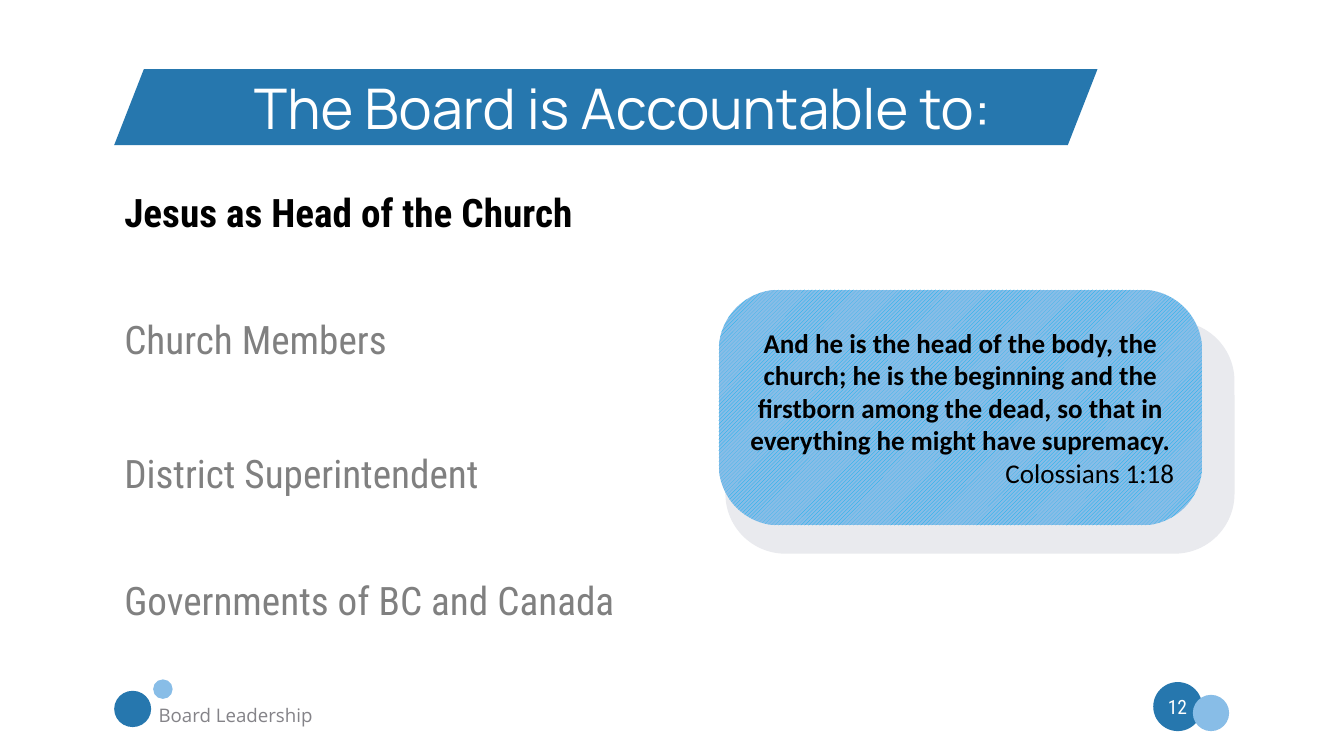
from dataclasses import dataclass
from pptx import Presentation
from pptx.dml.color import RGBColor
from pptx.enum.dml import MSO_PATTERN
from pptx.enum.shapes import MSO_SHAPE
from pptx.enum.text import MSO_ANCHOR, MSO_AUTO_SIZE, PP_ALIGN
from pptx.oxml.xmlchemy import OxmlElement
from pptx.util import Inches, Pt

# Content
TITLE = "The Board is Accountable to:"
ACCOUNTABLE_TO = ["Jesus as Head of the Church", "Church Members",
                  "District Superintendent", "Governments of BC and Canada"]
VERSE = ("And he is the head of the body, the church; he is the beginning and the "
         "firstborn among the dead, so that in everything he might have supremacy.")
REFERENCE = "Colossians 1:18"
FOOTER = "Board Leadership"
PAGE_NUMBER = "12"


@dataclass(frozen=True)
class Theme:
    blue: str = "2677AE"
    light_blue: str = "88BDE7"
    stripe: str = "00B0F0"
    shade: str = "E9EAEE"
    white: str = "FFFFFF"
    black: str = "000000"
    muted: str = "808080"
    footer: str = "848388"
    title_size: int = 60
    list_size: int = 42
    verse_size: int = 29
    number_size: int = 21
    footer_size: int = 20
    title_font: str = "Manrope"
    list_font: str = "Roboto Condensed"
    verse_font: str = "Calibri"
    footer_font: str = "Open Sans"


THEME = Theme()

# Layout in inches: left, top, width, height
WIDTH, HEIGHT = 20.01, 11.25
LEFT = 1.7
BANNER = (LEFT, 1.03, 14.64, 1.13)
TITLE_BOX = (LEFT, 1.03, 13.2, 1.13)
LIST_WIDTH = 8.75
ROW_TOPS = [2.72, 4.6, 6.58, 8.45]
ROW_HEIGHT = 0.86
LINE_HEIGHT = 1.172  # share of the type size
CARD_SHADE = (10.8, 4.78, 7.58, 3.46)
CARD = (10.7, 4.31, 7.2, 3.51)
DOTS = [
    ((17.17, 10.15, 0.73, 0.73), THEME.blue),
    ((LEFT, 10.28, 0.55, 0.54), THEME.blue),
    ((2.28, 10.11, 0.29, 0.29), THEME.light_blue),
    ((17.76, 10.34, 0.54, 0.54), THEME.light_blue),
]
NUMBER_BOX = (17.17, 10.29, 0.72, 0.6)
FOOTER_BOX = (LEFT + 0.51, 10.4, 2.65, 0.49)


def color(value):
    return RGBColor.from_string(value)


def place(shape, box):
    shape.left, shape.top, shape.width, shape.height = map(Inches, box)


def add_block(page, preset, box, fill, corner=None):
    shape = page.shapes.add_shape(preset, *map(Inches, box))
    shape.shadow.inherit = False
    shape.fill.solid()
    shape.fill.fore_color.rgb = color(fill)
    shape.line.fill.background()
    if corner is not None:
        shape.adjustments[0] = corner
    return shape


def set_frame(frame, anchor=MSO_ANCHOR.TOP, side=0.15, edge=0.08):
    frame.word_wrap = True
    frame.auto_size = MSO_AUTO_SIZE.NONE
    frame.vertical_anchor = anchor
    frame.margin_left = frame.margin_right = Inches(side)
    frame.margin_top = frame.margin_bottom = Inches(edge)


def write(para, text, font, size, ink, align=PP_ALIGN.LEFT, bold=False):
    para.text = text
    para.alignment = align
    para.font.name, para.font.size, para.font.bold = font, Pt(size), bold
    para.font.color.rgb = color(ink)


def add_lines(frame, lines):
    for index, line in enumerate(lines):
        para = frame.add_paragraph() if index else frame.paragraphs[0]
        write(para, *line)


def add_label(page, box, *line, side=0.15, edge=0.08):
    frame = page.shapes.add_textbox(*map(Inches, box)).text_frame
    set_frame(frame, side=side, edge=edge)
    write(frame.paragraphs[0], *line)


def fill_list(body):
    place(body, (LEFT, ROW_TOPS[0], LIST_WIDTH, ROW_TOPS[-1] + ROW_HEIGHT - ROW_TOPS[0]))
    frame = body.text_frame
    set_frame(frame)
    add_lines(frame, [
        (text, THEME.list_font, THEME.list_size, THEME.muted if row else THEME.black,
         PP_ALIGN.LEFT, row == 0)
        for row, text in enumerate(ACCOUNTABLE_TO)])
    gaps = [0] + [(below - above) * 72 - THEME.list_size * LINE_HEIGHT
                  for above, below in zip(ROW_TOPS, ROW_TOPS[1:])]
    for para, gap in zip(frame.paragraphs, gaps):
        para.space_before, para.space_after = Pt(gap), Pt(0)
        para.line_spacing = 1.0
        properties = para._p.get_or_add_pPr()
        properties.set("marL", "0")
        properties.set("indent", "0")
        properties.insert_element_before(OxmlElement("a:buNone"), "a:tabLst", "a:defRPr")


def add_verse_card(page):
    add_block(page, MSO_SHAPE.ROUNDED_RECTANGLE, CARD_SHADE, THEME.shade, 0.258)
    card = add_block(page, MSO_SHAPE.ROUNDED_RECTANGLE, CARD, THEME.light_blue, 0.258)
    card.fill.patterned()
    card.fill.pattern = MSO_PATTERN.WIDE_UPWARD_DIAGONAL
    card.fill.fore_color.rgb = color(THEME.stripe)
    card.fill.back_color.rgb = color(THEME.light_blue)
    set_frame(card.text_frame, MSO_ANCHOR.MIDDLE)
    style = (THEME.verse_font, THEME.verse_size, THEME.black)
    add_lines(card.text_frame, [(VERSE, *style, PP_ALIGN.CENTER, True),
                                (REFERENCE, *style, PP_ALIGN.RIGHT)])


def main():
    deck = Presentation()
    deck.slide_width, deck.slide_height = Inches(WIDTH), Inches(HEIGHT)
    page = deck.slides.add_slide(deck.slide_layouts[1])
    title, body = page.placeholders

    # Footer dots, page number and label
    for box, fill in DOTS:
        add_block(page, MSO_SHAPE.OVAL, box, fill)
    add_label(page, NUMBER_BOX, PAGE_NUMBER, THEME.list_font, THEME.number_size,
              THEME.white, PP_ALIGN.CENTER, side=0.1, edge=0.05)
    add_label(page, FOOTER_BOX, FOOTER, THEME.footer_font, THEME.footer_size, THEME.footer)

    # List and verse
    fill_list(body)
    add_verse_card(page)

    # Banner with the title in front
    add_block(page, MSO_SHAPE.PARALLELOGRAM, BANNER, THEME.blue, 0.391)
    place(title, TITLE_BOX)
    set_frame(title.text_frame, MSO_ANCHOR.MIDDLE)
    write(title.text_frame.paragraphs[0], TITLE, THEME.title_font, THEME.title_size,
          THEME.white, PP_ALIGN.RIGHT)
    page.shapes._spTree.append(title._element)

    deck.save("out.pptx")


if __name__ == "__main__":
    main()
